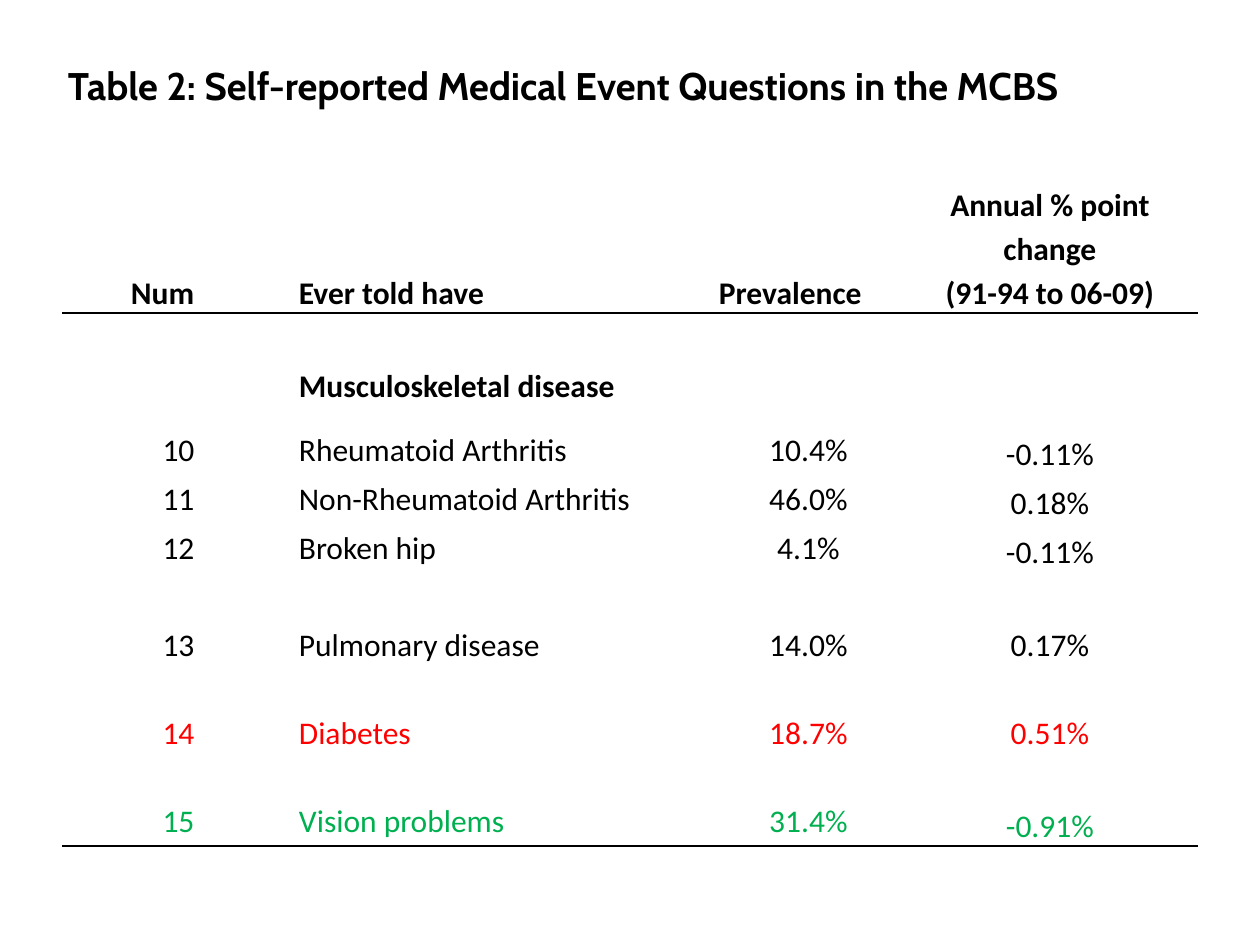
import dataclasses
import typing

import lxml.etree
import pptx
import pptx.dml.color
import pptx.enum.text
import pptx.oxml.ns
import pptx.util

SCALE = 914400 / 126
ALIGN = pptx.enum.text.PP_ALIGN
ANCHOR = pptx.enum.text.MSO_ANCHOR


@dataclasses.dataclass(frozen=True)
class Theme:
    ink: str = "000000"
    paper: str = "FFFFFF"
    rise: str = "FF0000"
    fall: str = "00B050"
    head: str = "Cabin"
    body: str = "Calibri"
    big: int = 22
    base: int = 18
    rule: int = 1


class Event(typing.NamedTuple):
    row: int
    num: str
    name: str
    share: str
    change: str
    color: str
    anchor: typing.Any = ANCHOR.BOTTOM


THEME = Theme()
COLS = (231, 420, 189, 294)
ROWS = (117, 133, 49, 25, 38, 49, 49, 49, 49, 88, 88, 49, 65)
TITLE, HEAD, GAP, GROUP, LAST, END = 0, 1, 2, 3, 11, 12
INSET = 5
SPANS = (
    ((TITLE, 0), (TITLE, 3)),
    ((GAP, 0), (4, 0)),
    ((GAP, 2), (4, 2)),
    ((GAP, 3), (GROUP, 3)),
    ((GROUP, 1), (4, 1)),
    ((END, 0), (END, 3)),
)
EVENTS = (
    Event(5, "10", "Rheumatoid Arthritis", "10.4%", "-0.11%", THEME.ink),
    Event(6, "11", "Non-Rheumatoid Arthritis", "46.0%", "0.18%", THEME.ink),
    Event(7, "12", "Broken hip", "4.1%", "-0.11%", THEME.ink),
    Event(9, "13", "Pulmonary disease", "14.0%", "0.17%", THEME.ink, ANCHOR.TOP),
    Event(10, "14", "Diabetes", "18.7%", "0.51%", THEME.rise, ANCHOR.TOP),
    Event(11, "15", "Vision problems", "31.4%", "-0.91%", THEME.fall),
)


def px(size: int) -> pptx.util.Emu:
    return pptx.util.Emu(round(size * SCALE))


def rgb(code: str) -> pptx.dml.color.RGBColor:
    return pptx.dml.color.RGBColor.from_string(code)


def edge(cell: typing.Any, side: str) -> None:
    """Rule one side of a cell; side is the DrawingML tag."""
    props = cell._tc.get_or_add_tcPr()
    qn = pptx.oxml.ns.qn
    line = lxml.etree.SubElement(
        props, qn(side), w=str(pptx.util.Pt(THEME.rule)))
    fill = lxml.etree.SubElement(line, qn("a:solidFill"))
    lxml.etree.SubElement(fill, qn("a:srgbClr"), val=THEME.ink)


def write(cell: typing.Any, text: str, *, font: str = THEME.body,
          size: int = THEME.base, color: str = THEME.ink, bold: bool = False,
          align: typing.Any = ALIGN.LEFT, anchor: typing.Any = ANCHOR.TOP,
          space: float = 1.15, left: int = INSET) -> None:
    cell.vertical_anchor = anchor
    cell.margin_left, cell.margin_right = px(left), px(INSET)
    frame = cell.text_frame
    frame.text = text
    for para in frame.paragraphs:
        para.alignment = align
        para.line_spacing = space
        for run in para.runs:
            run.font.name = font
            run.font.size = pptx.util.Pt(size)
            run.font.bold = bold
            run.font.color.rgb = rgb(color)


def grid(slide: typing.Any) -> typing.Any:
    """Add the bare table with its sizes, rules and spans."""
    table = slide.shapes.add_table(
        len(ROWS), len(COLS), px(63), px(63), px(sum(COLS)), px(sum(ROWS))
    ).table
    table.first_row = table.horz_banding = False
    for col, width in zip(table.columns, COLS):
        col.width = px(width)
    for index, (row, height) in enumerate(zip(table.rows, ROWS)):
        row.height = px(height)
        for cell in row.cells:
            if index in (GAP, END):
                edge(cell, "a:lnT")
            if index in (HEAD, LAST):
                edge(cell, "a:lnB")
            cell.fill.solid()
            cell.fill.fore_color.rgb = rgb(THEME.paper)
            cell.margin_left = cell.margin_right = px(INSET)
            cell.margin_top = cell.margin_bottom = 0
    for first, last in SPANS:
        table.cell(*first).merge(table.cell(*last))
    return table


def heads(table: typing.Any) -> None:
    write(table.cell(TITLE, 0),
          "Table 2: Self-reported Medical Event Questions in the MCBS",
          font=THEME.head, size=THEME.big, bold=True, space=1.0)
    labels = (
        ("Num", ALIGN.LEFT, 68),
        ("Ever told have", ALIGN.LEFT, INSET),
        ("Prevalence", ALIGN.LEFT, INSET),
        ("Annual % point change\n(91-94 to 06-09)", ALIGN.CENTER, INSET),
    )
    for col, (text, align, left) in enumerate(labels):
        write(table.cell(HEAD, col), text, bold=True, align=align,
              anchor=ANCHOR.BOTTOM, left=left)
    write(table.cell(GROUP, 1), "Musculoskeletal disease", bold=True)


def fill(table: typing.Any, event: Event) -> None:
    texts = (event.num, event.name, event.share, event.change)
    for col, text in enumerate(texts):
        write(table.cell(event.row, col), text, color=event.color,
              align=ALIGN.LEFT if col == 1 else ALIGN.CENTER,
              anchor=event.anchor if col == 3 else ANCHOR.TOP)


def main() -> None:
    deck = pptx.Presentation()
    deck.slide_width, deck.slide_height = px(1260), px(945)
    slide = deck.slides.add_slide(deck.slide_layouts.get_by_name("Blank"))
    table = grid(slide)
    heads(table)
    for event in EVENTS:
        fill(table, event)
    deck.save("out.pptx")


if __name__ == "__main__":
    main()
